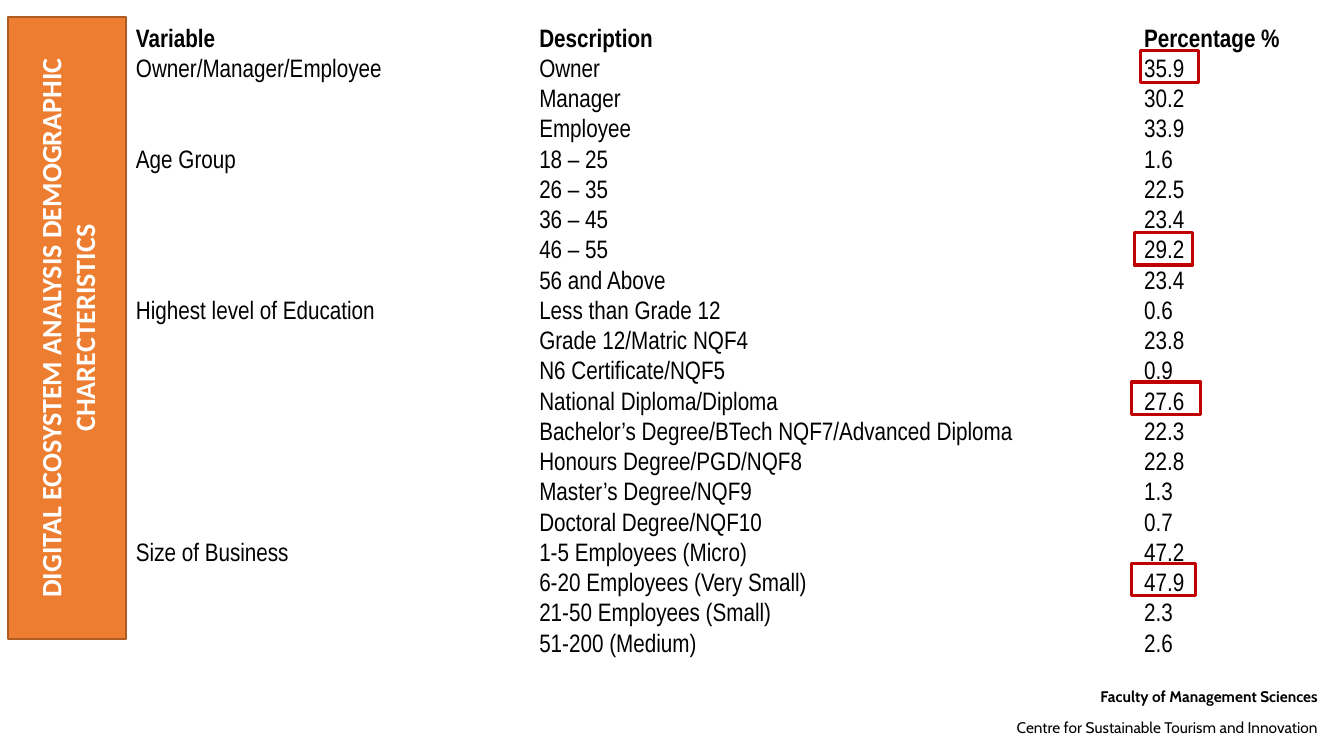
from lxml import etree
from pptx import Presentation
from pptx.dml.color import RGBColor
from pptx.enum.shapes import MSO_SHAPE
from pptx.enum.text import MSO_ANCHOR, PP_ALIGN
from pptx.oxml.ns import qn
from pptx.util import Inches, Pt

BLACK = RGBColor(0x00, 0x00, 0x00)
WHITE = RGBColor(0xFF, 0xFF, 0xFF)
ORANGE = RGBColor(0xED, 0x7D, 0x31)
DARK_ORANGE = RGBColor(0xAF, 0x5C, 0x24)
RED = RGBColor(0xC0, 0x00, 0x00)

TITLE = "DIGITAL ECOSYSTEM ANALYSIS DEMOGRAPHIC CHARECTERISTICS"
HEADINGS = ("Variable", "Description", "Percentage %")
COLUMN_STOPS = (4, 10)
DEMOGRAPHICS = {
    "Owner/Manager/Employee": [
        ("Owner", "35.9"),
        ("Manager", "30.2"),
        ("Employee", "33.9"),
    ],
    "Age Group": [
        ("18 – 25", "1.6"),
        ("26 – 35", "22.5"),
        ("36 – 45", "23.4"),
        ("46 – 55", "29.2"),
        ("56 and Above", "23.4"),
    ],
    "Highest level of Education": [
        ("Less than Grade 12", "0.6"),
        ("Grade 12/Matric NQF4", "23.8"),
        ("N6 Certificate/NQF5", "0.9"),
        ("National Diploma/Diploma", "27.6"),
        ("Bachelor’s Degree/BTech NQF7/Advanced Diploma", "22.3"),
        ("Honours Degree/PGD/NQF8", "22.8"),
        ("Master’s Degree/NQF9", "1.3"),
        ("Doctoral Degree/NQF10", "0.7"),
    ],
    "Size of Business": [
        ("1-5 Employees (Micro)", "47.2"),
        ("6-20 Employees (Very Small)", "47.9"),
        ("21-50 Employees (Small)", "2.3"),
        ("51-200 (Medium)", "2.6"),
    ],
}
# Left, top and width of the frame around the highest share of each group
HIGHLIGHTS = [
    (11.31, 0.5, 0.58),
    (11.25, 2.31, 0.58),
    (11.22, 3.79, 0.69),
    (11.22, 5.59, 0.64),
]
FOOTER = ("Faculty of Management Sciences", "Centre for Sustainable Tourism and Innovation")


def style_font(para, name, size, color, bold):
    font = para.font
    font.name = name
    font.size = Pt(size)
    font.color.rgb = color
    font.bold = bold


def add_text_box(slide, left, top, width, height):
    box = slide.shapes.add_textbox(Inches(left), Inches(top), Inches(width), Inches(height))
    box.text_frame.word_wrap = True
    return box.text_frame


def add_rectangle(slide, left, top, width, height, line_color, line_width):
    shape = slide.shapes.add_shape(
        MSO_SHAPE.RECTANGLE, Inches(left), Inches(top), Inches(width), Inches(height)
    )
    shape.shadow.inherit = False
    shape.fill.background()
    shape.line.color.rgb = line_color
    shape.line.width = Pt(line_width)
    return shape


def add_tab_stops(para, stops):
    tabs = etree.SubElement(para._p.get_or_add_pPr(), qn("a:tabLst"))
    for stop in stops:
        etree.SubElement(tabs, qn("a:tab"), pos=str(Inches(stop)), algn="l")


def add_footer(slide):
    frame = add_text_box(slide, 5.67, 6.68, 7.5, 0.56)
    frame.text = "\n".join(FOOTER)
    for index, para in enumerate(frame.paragraphs):
        para.alignment = PP_ALIGN.RIGHT
        para.line_spacing = 1.5
        if index:
            para.space_before = Pt(2.2)
        style_font(para, "Cabin", 11, BLACK, bold=index == 0)


def add_demographics(slide):
    rows = [HEADINGS]
    for variable, entries in DEMOGRAPHICS.items():
        for index, entry in enumerate(entries):
            rows.append(("" if index else variable, *entry))

    frame = add_text_box(slide, 1.25, 0.17, 11.75, 6.77)
    frame.text = "\n".join("\t".join(row) for row in rows)
    for index, para in enumerate(frame.paragraphs):
        para.alignment = PP_ALIGN.JUSTIFY
        add_tab_stops(para, COLUMN_STOPS)
        style_font(para, "Arial Narrow", 18, BLACK, bold=index == 0)


def add_side_title(slide):
    banner = add_rectangle(slide, 0.08, 0.17, 1.17, 6.17, DARK_ORANGE, 1)
    banner.fill.solid()
    banner.fill.fore_color.rgb = ORANGE
    frame = banner.text_frame
    frame.text = TITLE
    frame.word_wrap = True
    frame.vertical_anchor = MSO_ANCHOR.MIDDLE
    frame._txBody.bodyPr.set("vert", "vert270")
    para = frame.paragraphs[0]
    para.alignment = PP_ALIGN.CENTER
    style_font(para, "Calibri", 20, WHITE, bold=True)


def main():
    deck = Presentation()
    deck.slide_width = Inches(13.33)
    deck.slide_height = Inches(7.5)
    slide = deck.slides.add_slide(deck.slide_layouts[6])
    add_footer(slide)
    add_demographics(slide)
    add_side_title(slide)
    for left, top, width in HIGHLIGHTS:
        add_rectangle(slide, left, top, width, 0.32, RED, 2.25)
    deck.save("out.pptx")


if __name__ == "__main__":
    main()
